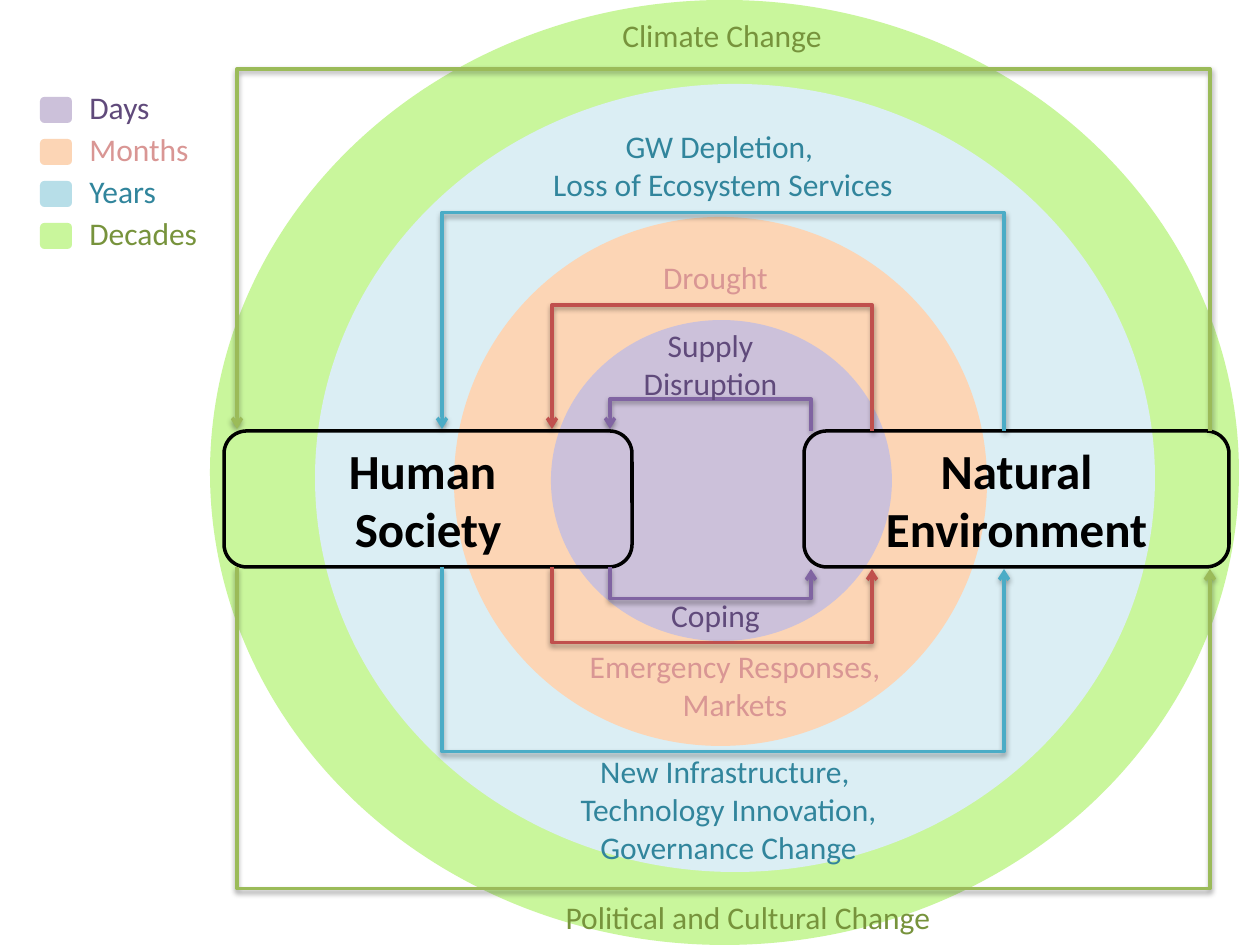
import pptx
import pptx.dml.color
import pptx.enum.shapes
import pptx.enum.text
import pptx.oxml
import pptx.oxml.ns
import pptx.util

SCALE = 914400 / 126  # EMU in one px
SHAPE = pptx.enum.shapes.MSO_SHAPE
ALIGN = pptx.enum.text.PP_ALIGN
FONT = "Calibri"

# Text and fill colours of the four time scales
PURPLE, ROSE, TEAL, OLIVE = "604A7B", "D99694", "31859C", "77933C"
LILAC, PEACH, SKY, LIME = "CCC1DA", "FCD5B5", "B7DEE8", "C9F69C"

BOX_TOP, BOX_BOTTOM = 431, 567
STEP = 2  # height between the two ends of a loop

RINGS = [  # left, top, width, height, fill
    (210, 0, 1029, 945, LIME),
    (315, 84, 840, 788, "DBEEF4"),
    (454, 217, 533, 529, PEACH),
    (551, 320, 341, 321, LILAC),
]
SYSTEMS = [  # left, width, paragraphs
    (224, 408, ["Human ", "Society"]),
    (804, 425, ["Natural Environment"]),
]
LOOPS = [  # left, right, rise above boxes, drop below boxes, colour
    (610, 811, 32, 32, "8064A2"),
    (552, 872, 127, 76, "C0504D"),
    (442, 1004, 220, 186, "4BACC6"),
    (237, 1210, 365, 324, "9BBB59"),
]
LABELS = [  # left, top, width, height, colour, paragraphs
    (514, 10, 416, 50, OLIVE, ["Climate Change"]),
    (540, 892, 416, 50, OLIVE, ["Political and Cultural Change"]),
    (515, 121, 416, 89, TEAL, ["GW Depletion, ", "Loss of Ecosystem Services"]),
    (610, 320, 201, 89, PURPLE, ["Supply Disruption"]),
    (615, 590, 201, 50, PURPLE, ["Coping"]),
    (615, 252, 201, 50, ROSE, ["Drought"]),
    (504, 746, 449, 127, TEAL,
     ["New Infrastructure, ", "Technology Innovation, Governance Change"]),
    (558, 641, 354, 89, ROSE, ["Emergency Responses, Markets"]),
]
LEGEND = [("Days", PURPLE, LILAC), ("Months", ROSE, PEACH),
          ("Years", TEAL, SKY), ("Decades", OLIVE, LIME)]


def px(*lengths):
    return [pptx.util.Emu(round(length * SCALE)) for length in lengths]


def color(value):
    return pptx.dml.color.RGBColor.from_string(value)


def xml(markup):
    head, tail = markup.split(" ", 1)
    return pptx.oxml.parse_xml(f"{head} {pptx.oxml.ns.nsdecls('a')} {tail}")


def write(frame, lines, size, ink, bold=False, align=ALIGN.CENTER):
    frame.word_wrap = True
    for index, line in enumerate(lines):
        para = frame.add_paragraph() if index else frame.paragraphs[0]
        para.alignment = align
        span = para.add_run()
        span.text = line
        span.font.name = FONT
        span.font.size = pptx.util.Pt(size)
        span.font.bold = bold
        span.font.color.rgb = color(ink)


def add_shape(page, kind, left, top, width, height, fill=None):
    shape = page.shapes.add_shape(kind, *px(left, top, width, height))
    shape.shadow.inherit = False
    if fill:
        shape.fill.solid()
        shape.fill.fore_color.rgb = color(fill)
        shape.line.fill.background()
    else:
        shape.fill.background()
    return shape


def add_system(page, left, width, lines):
    box = add_shape(page, SHAPE.ROUNDED_RECTANGLE, left, BOX_TOP,
                    width, BOX_BOTTOM - BOX_TOP)
    box.line.color.rgb = color("000000")
    box.line.width = pptx.util.Pt(2)
    box.text_frame.vertical_anchor = pptx.enum.text.MSO_ANCHOR.MIDDLE
    write(box.text_frame, lines, 28, "000000", bold=True)


def add_label(page, left, top, width, height, ink, lines, align=ALIGN.CENTER):
    box = page.shapes.add_textbox(*px(left, top, width, height))
    write(box.text_frame, lines, 18, ink, align=align)
    box.text_frame.auto_size = pptx.enum.text.MSO_AUTO_SIZE.SHAPE_TO_FIT_TEXT


def add_loop(page, left, right, edge, depth, ink, flip):
    # A quarter turn makes the elbow leave and arrive vertically
    middle, half = (left + right) / 2, (right - left) / 2
    loop = page.shapes.add_connector(
        pptx.enum.shapes.MSO_CONNECTOR.ELBOW,
        *px(middle - STEP / 2, edge - half, middle + STEP / 2, edge + half))
    loop.line.color.rgb = color(ink)
    loop.line.width = pptx.util.Pt(2)
    props = loop._element.spPr
    frame = props.xpath("a:xfrm")[0]
    frame.set("rot", "16200000")
    frame.set(flip, "1")
    guides = props.xpath("a:prstGeom")[0].get_or_add_avLst()
    guides.append(xml(f'<a:gd name="adj1" fmla="val {depth * 100000 // STEP}"/>'))
    props.xpath("a:ln")[0].append(xml('<a:tailEnd type="arrow"/>'))
    props.append(xml(
        '<a:effectLst ><a:outerShdw blurRad="40000" dist="20000" dir="5400000" '
        'rotWithShape="0"><a:srgbClr val="000000"><a:alpha val="38000"/>'
        '</a:srgbClr></a:outerShdw></a:effectLst>'))


def main():
    deck = pptx.Presentation()
    deck.slide_width, deck.slide_height = px(1260, 945)
    page = deck.slides.add_slide(deck.slide_layouts[6])

    # Nested time scales and the two systems
    for *place, fill in RINGS:
        add_shape(page, SHAPE.OVAL, *place, fill)
    for system in SYSTEMS:
        add_system(page, *system)

    # Feedback loops above and below the systems
    for left, right, rise, drop, ink in LOOPS:
        add_loop(page, left, right, BOX_TOP - STEP / 2, rise, ink, "flipV")
        add_loop(page, left, right, BOX_BOTTOM + STEP / 2, drop, ink, "flipH")
    for label in LABELS:
        add_label(page, *label)

    # Legend
    for row, (name, ink, fill) in enumerate(LEGEND):
        top = 82 + 42 * row
        add_label(page, 77, top, 147, 50, ink, [name], ALIGN.LEFT)
        add_shape(page, SHAPE.ROUNDED_RECTANGLE, 40, top + 15, 32, 26, fill)

    deck.save("out.pptx")


if __name__ == "__main__":
    main()
